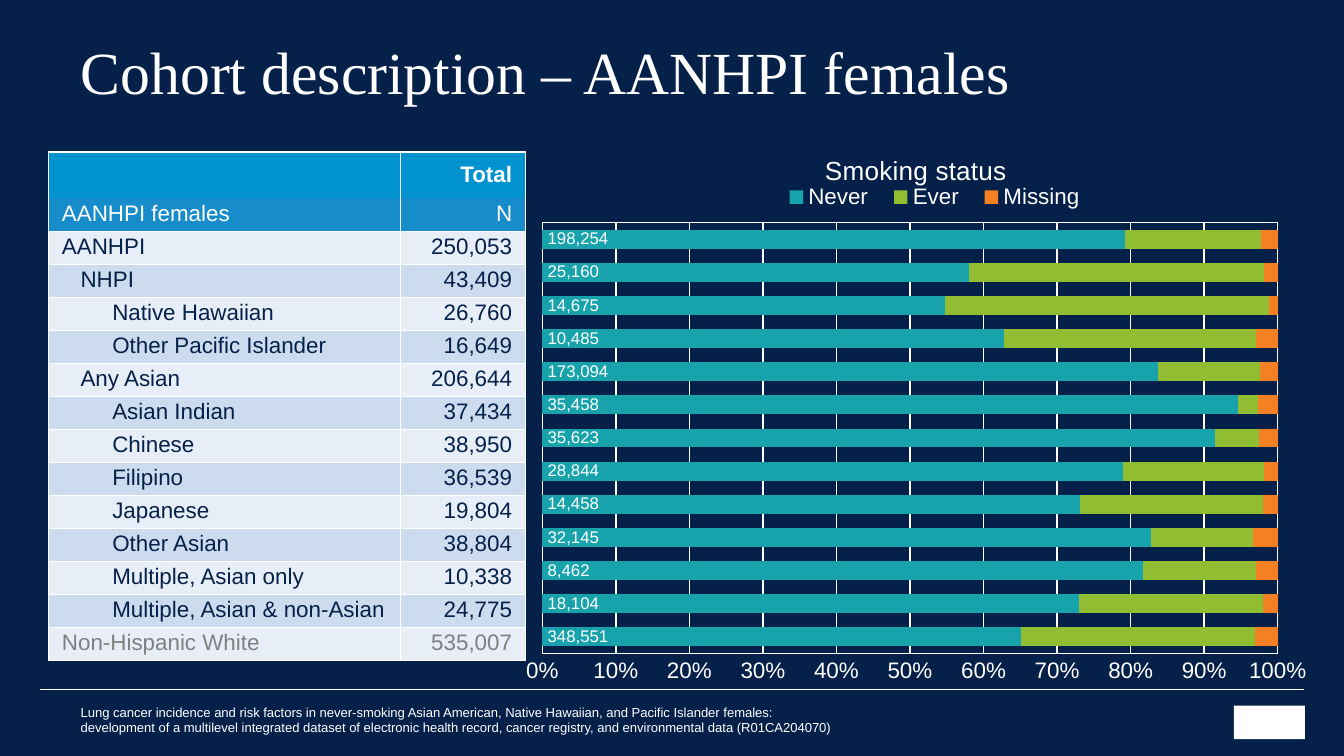
from lxml import etree
from pptx import Presentation
from pptx.chart.data import CategoryChartData
from pptx.dml.color import RGBColor
from pptx.enum.chart import XL_CHART_TYPE, XL_LABEL_POSITION, XL_LEGEND_POSITION, XL_TICK_MARK
from pptx.enum.shapes import MSO_CONNECTOR, MSO_SHAPE
from pptx.enum.text import MSO_ANCHOR, PP_ALIGN
from pptx.oxml import parse_xml
from pptx.oxml.ns import nsdecls, qn
from pptx.util import Pt

BARS = XL_CHART_TYPE.BAR_STACKED_100
INSIDE_BASE = XL_LABEL_POSITION.INSIDE_BASE
LEGEND_TOP = XL_LEGEND_POSITION.TOP
NO_TICKS = XL_TICK_MARK.NONE
STRAIGHT = MSO_CONNECTOR.STRAIGHT
RECTANGLE = MSO_SHAPE.RECTANGLE
TOP, MIDDLE, BOTTOM = MSO_ANCHOR.TOP, MSO_ANCHOR.MIDDLE, MSO_ANCHOR.BOTTOM
LEFT, RIGHT = PP_ALIGN.LEFT, PP_ALIGN.RIGHT

COLORS = {
    "navy": "052049", "white": "FFFFFF", "grey": "808080",
    "header": "0093D0", "subheader": "178CCB",
    "light band": "E7EEF7", "dark band": "CCDCEE",
    "Never": "18A3AC", "Ever": "90BD31", "Missing": "F48024",
}
RGB = {name: RGBColor.from_string(code) for name, code in COLORS.items()}

# group, indent level, total, never, ever, missing
GROUPS = [
    ("AANHPI", 0, 250053, 198254, 46000, 5800),
    ("NHPI", 1, 43409, 25160, 17400, 800),
    ("Native Hawaiian", 2, 26760, 14675, 11800, 300),
    ("Other Pacific Islander", 2, 16649, 10485, 5700, 500),
    ("Any Asian", 1, 206644, 173094, 28500, 5100),
    ("Asian Indian", 2, 37434, 35458, 1000, 1000),
    ("Chinese", 2, 38950, 35623, 2300, 1000),
    ("Filipino", 2, 36539, 28844, 7000, 700),
    ("Japanese", 2, 19804, 14458, 4900, 400),
    ("Other Asian", 2, 38804, 32145, 5400, 1300),
    ("Multiple, Asian only", 2, 10338, 8462, 1600, 300),
    ("Multiple, Asian & non-Asian", 2, 24775, 18104, 6200, 500),
    ("Non-Hispanic White", 0, 535007, 348551, 169700, 16800),
]
INDENTS = [0, 10, 27]


def write(frame, text, size=12, color="white", font="Arial", bold=False, align=None, spacing=None):
    paragraph = frame.paragraphs[0]
    paragraph.text = text
    paragraph.alignment = align
    paragraph.line_spacing = spacing
    for run in paragraph.runs:
        run.font.size = Pt(size)
        run.font.name = font
        run.font.bold = bold
        run.font.color.rgb = RGB[color]


def place(part, index, **fractions):
    """Give a chart part a manual layout, in fractions of the chart area."""
    for old in part.findall(qn("c:layout")):
        part.remove(old)
    layout = parse_xml(f'<c:layout {nsdecls("c")}><c:manualLayout/></c:layout>')
    target = "inner" if "w" in fractions and index == 0 else None
    settings = {"layoutTarget": target, "xMode": "edge", "yMode": "edge", **fractions}
    for tag, value in settings.items():
        if value is not None:
            etree.SubElement(layout[0], qn(f"c:{tag}")).set("val", str(value))
    part.insert(index, layout)


prs = Presentation()
prs.slide_width, prs.slide_height = Pt(720), Pt(405)
slide = prs.slides.add_slide(prs.slide_layouts[5])
slide.background.fill.solid()
slide.background.fill.fore_color.rgb = RGB["navy"]

# Footer rule and plain block in the corner
rule = slide.shapes.add_connector(STRAIGHT, Pt(21.6), Pt(369.4), Pt(698.4), Pt(369.4))
rule.line.color.rgb = RGB["white"]
rule.line.width = Pt(0.25)
etree.SubElement(rule._element.spPr, qn("a:effectLst"))

emblem = slide.shapes.add_shape(RECTANGLE, Pt(661), Pt(378), Pt(38), Pt(18))
emblem.shadow.inherit = False
emblem.fill.solid()
emblem.fill.fore_color.rgb = RGB["white"]
emblem.line.fill.background()

# Title
title = slide.shapes.title
title.left, title.top, title.width, title.height = Pt(36), Pt(25), Pt(644), Pt(36)
title.text_frame.vertical_anchor = BOTTOM
write(title.text_frame, "Cohort description – AANHPI females", size=32,
      font="Times New Roman", align=LEFT, spacing=0.85)

# Table of totals
rows = [("", 0, "Total", "header"), ("AANHPI females", 0, "N", "subheader")]
for number, (group, level, total, *_) in enumerate(GROUPS):
    rows.append((group, level, f"{total:,}", "dark band" if number % 2 else "light band"))

totals = slide.shapes.add_table(len(rows), 2, Pt(26), Pt(81.4), Pt(255.6), Pt(267)).table
totals.columns[0].width, totals.columns[1].width = Pt(188.6), Pt(67)
for r, (group, level, total, band) in enumerate(rows):
    totals.rows[r].height = Pt(17.7 if r else 19.3)
    color = "white" if r < 2 else "grey" if r == len(rows) - 1 else "navy"
    for c, (text, align) in enumerate([(group, LEFT), (total, RIGHT)]):
        cell = totals.cell(r, c)
        cell.margin_left = Pt(7.2 + (0 if c else INDENTS[level]))
        cell.margin_right = Pt(7.2)
        cell.margin_top = cell.margin_bottom = Pt(1.44)
        cell.vertical_anchor = TOP if r else MIDDLE
        write(cell.text_frame, text, color=color, bold=r == 0, align=align)
        properties = cell._tc.get_or_add_tcPr()
        for side in ("lnL", "lnR", "lnT", "lnB"):
            between_headers = (r, side) in [(0, "lnB"), (1, "lnT")]
            paint = "<a:noFill/>" if between_headers else (
                f'<a:solidFill><a:srgbClr val="{COLORS["white"]}"/></a:solidFill>')
            properties.append(parse_xml(
                f'<a:{side} {nsdecls("a")} w="{Pt(1)}">{paint}</a:{side}>'))
        cell.fill.solid()
        cell.fill.fore_color.rgb = RGB[band]

# Source of the work
project = slide.shapes.add_textbox(Pt(43.2), Pt(378), Pt(408), Pt(16)).text_frame
project.word_wrap = True
project.margin_left = project.margin_right = project.margin_top = project.margin_bottom = 0
project.vertical_anchor = BOTTOM
write(project, "Lung cancer incidence and risk factors in never-smoking Asian American, "
      "Native Hawaiian, and Pacific Islander females:\vdevelopment of a multilevel integrated "
      "dataset of electronic health record, cancer registry, and environmental data "
      "(R01CA204070)", size=7)

# Smoking status chart, with the first group at the top
smoking = CategoryChartData(number_format="#,##0")
smoking.categories = [str(n + 1) for n in range(len(GROUPS))]
for column, status in enumerate(["Never", "Ever", "Missing"], start=3):
    smoking.add_series(status, [group[column] for group in reversed(GROUPS)])
chart = slide.shapes.add_chart(BARS, Pt(273), Pt(67.7), Pt(437.8), Pt(303.8), smoking).chart
chart.font.name = "Arial"
chart.font.size = Pt(10)
chart.font.color.rgb = RGB["white"]

chart.has_title = True
write(chart.chart_title.text_frame, "Smoking status", size=14)
place(chart.chart_title._element, 1, x=0.38, y=0.04)

chart.has_legend = True
chart.legend.position = LEGEND_TOP
chart.legend.include_in_layout = False
chart.legend.font.size = Pt(12)
chart.legend.font.name = "Arial"
chart.legend.font.color.rgb = RGB["white"]
place(chart.legend._element, 1, x=0.32, y=0.09, w=0.4, h=0.07)

bars = chart.plots[0]
bars.gap_width = 75
bars.overlap = 100
bars.vary_by_categories = False
for series in bars.series:
    series.format.fill.solid()
    series.format.fill.fore_color.rgb = RGB[series.name]

never_labels = bars.series[0].data_labels
never_labels.show_value = True
never_labels.position = INSIDE_BASE
never_labels.number_format = "#,##0"
never_labels.number_format_is_linked = False
never_labels.font.size = Pt(9)
never_labels.font.name = "Arial"
never_labels.font.color.rgb = RGB["white"]

chart.category_axis.visible = False
share = chart.value_axis
share.minimum_scale, share.maximum_scale, share.major_unit = 0, 1, 0.1
share.major_tick_mark = share.minor_tick_mark = NO_TICKS
share.tick_labels.number_format = "0%"
share.tick_labels.number_format_is_linked = False
share.tick_labels.font.size = Pt(12)
share.tick_labels.font.name = "Arial"
share.tick_labels.font.color.rgb = RGB["white"]
share.format.line.fill.background()
share.major_gridlines.format.line.color.rgb = RGB["white"]
share.major_gridlines.format.line.width = Pt(0.75)

plot_area = chart._chartSpace.chart.plotArea
place(plot_area, 0, x=0.04, y=0.17, w=0.9, h=0.76)
plot_area.append(parse_xml(
    f'<c:spPr {nsdecls("c", "a")}><a:noFill/><a:ln w="{Pt(0.75)}"><a:solidFill>'
    f'<a:srgbClr val="{COLORS["white"]}"/></a:solidFill></a:ln></c:spPr>'))

prs.save("out.pptx")
